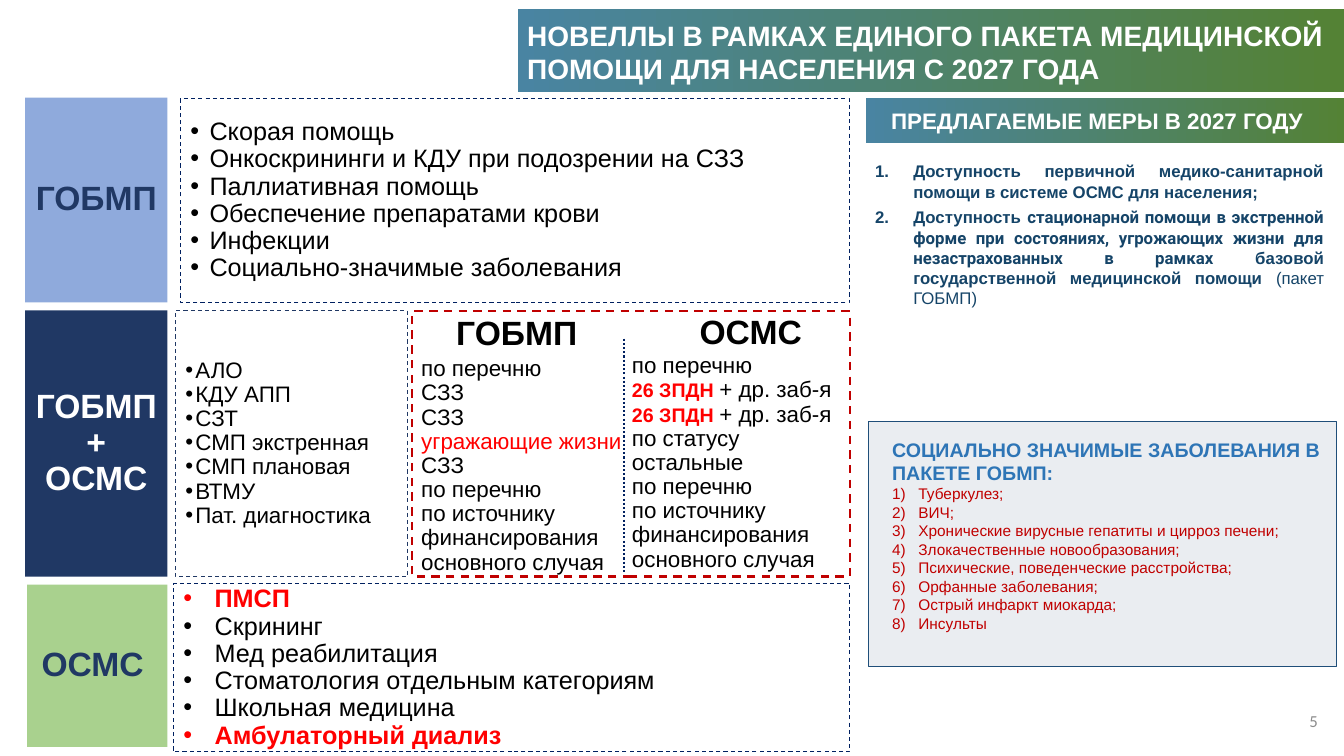
from lxml import etree
from pptx import Presentation
from pptx.dml.color import RGBColor
from pptx.enum.dml import MSO_LINE
from pptx.enum.shapes import MSO_CONNECTOR, MSO_SHAPE
from pptx.enum.text import MSO_ANCHOR, PP_ALIGN
from pptx.oxml.ns import qn
from pptx.util import Pt

PX = 9144
RECT = MSO_SHAPE.RECTANGLE
STRAIGHT = MSO_CONNECTOR.STRAIGHT
DASH, DOT = MSO_LINE.DASH, MSO_LINE.ROUND_DOT
TOP, MIDDLE = MSO_ANCHOR.TOP, MSO_ANCHOR.MIDDLE
LEFT, CENTER = PP_ALIGN.LEFT, PP_ALIGN.CENTER
RIGHT, JUSTIFY = PP_ALIGN.RIGHT, PP_ALIGN.JUSTIFY

NAVY, INDIGO, RED, CRIMSON = "203864", "002060", "FF0000", "C00000"
BLACK, WHITE = "000000", "FFFFFF"
HOT = {"color": RED, "bold": True}
CODE = {"color": RED, "bold": True, "size": 14}
FUNDING = "по источнику финансирования основного случая"

GUARANTEED = [
    "Скорая помощь",
    "Онкоскрининги и КДУ при подозрении на СЗЗ",
    "Паллиативная помощь",
    "Обеспечение препаратами крови",
    "Инфекции",
    "Социально-значимые заболевания",
]
SHARED = ["АЛО", "КДУ АПП", "СЗТ", "СМП экстренная", "СМП плановая", "ВТМУ",
          "Пат. диагностика"]
SHARED_GUARANTEED = [
    "по перечню", "СЗЗ", "СЗЗ",
    [("угражающие жизни", {"color": RED})],
    "СЗЗ", "по перечню", FUNDING,
]
SHARED_INSURED = [
    "по перечню",
    [("26 ЗПДН ", CODE), ("+ др. заб-я ", {}),
     ("26 ЗПДН ", CODE), ("+ др. заб-я", {})],
    "по статусу", "остальные", "по перечню", FUNDING,
]
INSURED = [
    [("ПМСП", HOT)],
    "Скрининг",
    "Мед реабилитация",
    "Стоматология отдельным категориям",
    "Школьная медицина",
    [("Амбулаторный диализ", HOT)],
]
MEASURES = [
    "Доступность первичной медико-санитарной помощи в системе ОСМС для населения;",
    [("Доступность ", {}),
     ("стационарной помощи в экстренной форме при состояниях, угрожающих жизни "
      "для незастрахованных в рамках ", {"font": "Roboto"}),
     ("базовой государственной медицинской помощи ", {}),
     ("(пакет ГОБМП)", {"bold": False})],
]
DISEASES = [
    "Туберкулез;",
    "ВИЧ;",
    "Хронические вирусные гепатиты и цирроз печени;",
    "Злокачественные новообразования;",
    "Психические, поведенческие расстройства;",
    "Орфанные заболевания;",
    "Острый инфаркт миокарда;",
    "Инсульты",
]


def rgb(color):
    return RGBColor.from_string(color)


def add_bullet(paragraph, bullet, indent):
    props = paragraph._p.get_or_add_pPr()
    props.set("marL", str(indent * PX))
    props.set("indent", str(-indent * PX))
    if bullet == "•":
        font = etree.SubElement(props, qn("a:buFont"))
        font.set("typeface", "Arial")
        etree.SubElement(props, qn("a:buChar")).set("char", bullet)
    else:
        etree.SubElement(props, qn("a:buAutoNum")).set("type", bullet)


def write(shape, paragraphs, size=18, color=BLACK, bold=False, font="Arial",
          align=LEFT, anchor=TOP, spacing=None, after=None, bullet=None,
          indent=0, side=10, extend=False):
    frame = shape.text_frame
    frame.word_wrap = True
    frame.vertical_anchor = anchor
    frame.margin_left = frame.margin_right = side * PX
    frame.margin_top = frame.margin_bottom = 5 * PX
    for index, content in enumerate(paragraphs):
        fresh = index == 0 and not extend
        paragraph = frame.paragraphs[0] if fresh else frame.add_paragraph()
        if bullet:
            add_bullet(paragraph, bullet, indent)
        paragraph.alignment = align
        if spacing:
            paragraph.line_spacing = spacing
        if after:
            paragraph.space_after = Pt(after)
        runs = [(content, {})] if isinstance(content, str) else content
        for words, changes in runs:
            style = {"size": size, "color": color, "bold": bold, "font": font} | changes
            run = paragraph.add_run()
            run.text = words
            run.font.size = Pt(style["size"])
            run.font.bold = style["bold"]
            run.font.name = style["font"]
            run.font.color.rgb = rgb(style["color"])


def add_panel(slide, box, fill=None, line=None, width=0.75, dash=None):
    panel = slide.shapes.add_shape(RECT, *(n * PX for n in box))
    panel.shadow.inherit = False
    if fill:
        panel.fill.solid()
        panel.fill.fore_color.rgb = rgb(fill)
    else:
        panel.fill.background()
    if line:
        panel.line.color.rgb = rgb(line)
        panel.line.width = Pt(width)
        if dash:
            panel.line.dash_style = dash
    else:
        panel.line.fill.background()
    return panel


def add_banner(slide, box):
    fill = add_panel(slide, box).fill
    fill.gradient()
    fill.gradient_angle = 0
    for stop, position, color in zip(fill.gradient_stops, (0, 1), ("4984A2", "548235")):
        stop.position = position
        stop.color.rgb = rgb(color)


def add_label(slide, box, fill, color, words):
    write(add_panel(slide, box, fill), [words], size=24, color=color, bold=True,
          align=CENTER, anchor=MIDDLE, spacing=0.9, side=8)


def add_list(slide, box, line, items, size, indent):
    write(add_panel(slide, box, line=line, dash=DASH), items, size=size,
          anchor=MIDDLE, spacing=0.9, bullet="•", indent=indent)


def add_text(slide, box, paragraphs, **style):
    text = slide.shapes.add_textbox(*(n * PX for n in box))
    write(text, paragraphs, **style)
    return text


def add_divider(slide, x, top, bottom):
    divider = slide.shapes.add_connector(STRAIGHT, x * PX, top * PX, x * PX, bottom * PX)
    divider.line.color.rgb = rgb(INDIGO)
    divider.line.width = Pt(1.5)
    divider.line.dash_style = DOT
    etree.SubElement(divider._element.spPr, qn("a:effectLst"))


def add_packages(slide):
    add_label(slide, (25, 308, 141, 264), NAVY, WHITE, "ГОБМП + ОСМС")
    add_label(slide, (25, 97, 141, 203), "8FAADC", NAVY, "ГОБМП")
    add_label(slide, (27, 580, 139, 161), "A9D18E", NAVY, "ОСМС ")
    add_list(slide, (179, 98, 664, 202), INDIGO, GUARANTEED, 18, 19)
    add_list(slide, (174, 308, 230, 264), NAVY, SHARED, 16, 10)
    add_list(slide, (172, 579, 671, 167), INDIGO, INSURED, 18, 31)
    for box, conditions in (((408, 361, 220, 203), SHARED_GUARANTEED),
                            ((617, 344, 234, 231), SHARED_INSURED)):
        add_text(slide, box, conditions, size=16, anchor=MIDDLE, spacing=0.9)
    add_text(slide, (442, 305, 141, 50), ["ГОБМП"], size=24, bold=True, align=CENTER)
    add_text(slide, (684, 304, 138, 50), ["ОСМС"], size=24, bold=True)
    add_panel(slide, (409, 309, 434, 263), line=CRIMSON, width=1.5, dash=DASH)
    add_divider(slide, 619, 336, 568)


def add_measures(slide):
    add_banner(slide, (859, 97, 476, 45))
    add_text(slide, (874, 101, 436, 37), ["ПРЕДЛАГАЕМЫЕ МЕРЫ В 2027 ГОДУ"],
             size=16, color=WHITE, bold=True)
    add_text(slide, (858, 155, 465, 157), MEASURES, size=12, color="154468", bold=True,
             align=JUSTIFY, after=4, bullet="arabicPeriod", indent=38)


def add_diseases(slide):
    card = add_panel(slide, (861, 418, 465, 243), fill="D6DCE5", line="1F4E79")
    tint = card._element.spPr.find(qn("a:solidFill"))[0]
    etree.SubElement(tint, qn("a:alpha")).set("val", "50000")
    diseases = add_text(slide, (875, 429, 447, 205),
                        ["СОЦИАЛЬНО ЗНАЧИМЫЕ ЗАБОЛЕВАНИЯ В ПАКЕТЕ ГОБМП:"],
                        size=14, color="2E75B6", bold=True)
    write(diseases, DISEASES, size=11, color=CRIMSON, bullet="arabicParenR",
          indent=26, extend=True)


def main():
    deck = Presentation()
    deck.slide_width, deck.slide_height = 1333 * PX, 750 * PX
    slide = deck.slides.add_slide(deck.slide_layouts[6])
    add_banner(slide, (514, 9, 820, 82))
    add_text(slide, (1017, 695, 300, 40), ["5"], size=12, color="8C8C8C",
             font="Calibri", align=RIGHT, anchor=MIDDLE)
    add_text(slide, (513, 13, 820, 77),
             ["НОВЕЛЛЫ В РАМКАХ ЕДИНОГО ПАКЕТА МЕДИЦИНСКОЙ ПОМОЩИ "
              "ДЛЯ НАСЕЛЕНИЯ С 2027 ГОДА"], size=20, color=WHITE, bold=True)
    add_packages(slide)
    add_measures(slide)
    add_diseases(slide)
    deck.save("out.pptx")


if __name__ == "__main__":
    main()
